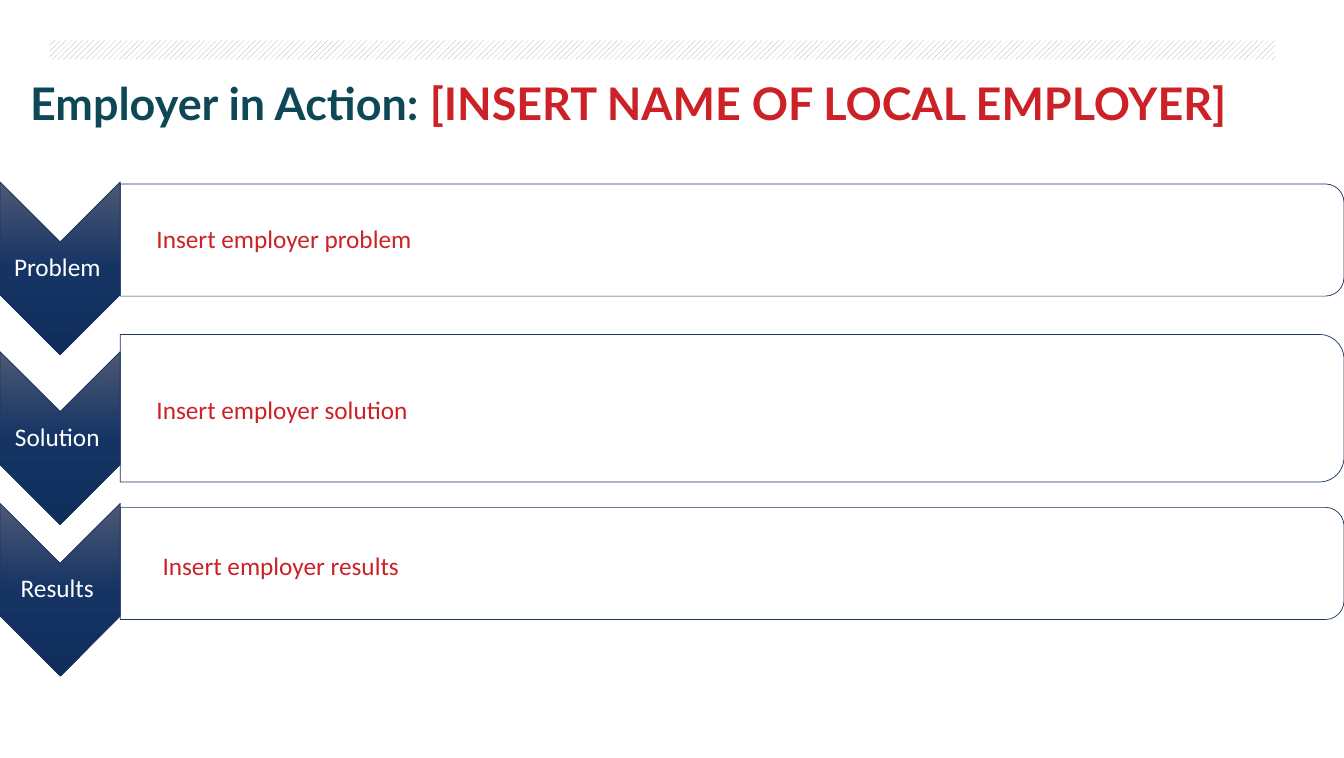
from copy import deepcopy

from pptx import Presentation
from pptx.dml.color import RGBColor
from pptx.enum.dml import MSO_PATTERN
from pptx.enum.shapes import MSO_SHAPE
from pptx.enum.text import MSO_ANCHOR, PP_ALIGN
from pptx.util import Inches, Pt

RECT = MSO_SHAPE.RECTANGLE
CHEVRON = MSO_SHAPE.CHEVRON
ROUND_TOP = MSO_SHAPE.ROUND_2_SAME_RECTANGLE
HATCH = MSO_PATTERN.WIDE_UPWARD_DIAGONAL
MIDDLE, TOP = MSO_ANCHOR.MIDDLE, MSO_ANCHOR.TOP
LEFT, CENTER = PP_ALIGN.LEFT, PP_ALIGN.CENTER

WHITE = RGBColor(0xFF, 0xFF, 0xFF)
GRAY = RGBColor(0x9E, 0xA7, 0xB2)
TEAL = RGBColor(0x0E, 0x47, 0x56)
RED = RGBColor(0xCC, 0x21, 0x26)
NAVY = RGBColor(0x19, 0x35, 0x60)
SHADES = (RGBColor(0x4D, 0x58, 0x75), RGBColor(0x15, 0x34, 0x64),
          RGBColor(0x10, 0x2E, 0x5C))


class ActionSlide:
    heading_font = "Lato"
    body_font = "Calibri"

    def __init__(self, prs):
        self.s = prs.slides.add_slide(prs.slide_layouts[6])

    def shape(self, kind, x, y, w, h):
        sp = self.s.shapes.add_shape(kind, Inches(x), Inches(y), Inches(w), Inches(h))
        sp.shadow.inherit = False
        return sp

    def turned(self, kind, x, y, w, h):
        """Add a shape turned by 90 degrees that covers the given visible box."""
        sp = self.shape(kind, x + (w - h) / 2, y + (h - w) / 2, h, w)
        sp.rotation = 90
        sp.line.color.rgb = NAVY
        sp.line.width = Pt(0.5)
        return sp

    def hatch_band(self, x, y, w, h):
        sp = self.shape(RECT, x, y, w, h)
        sp.fill.patterned()
        sp.fill.pattern = HATCH
        sp.fill.fore_color.rgb = GRAY
        sp.fill.back_color.rgb = WHITE
        sp.line.fill.background()

    def chevron(self, x, y, w, h):
        sp = self.turned(CHEVRON, x, y, w, h)
        sp.fill.gradient()
        sp.fill.gradient_angle = 0
        # A new gradient has two stops; add the third
        first = sp.fill._fill._gradFill.gsLst[0]
        first.addnext(deepcopy(first))
        for i, (stop, shade) in enumerate(zip(sp.fill.gradient_stops, SHADES)):
            stop.position = i / 2
            stop.color.rgb = shade

    def panel(self, x, y, w, h):
        self.turned(ROUND_TOP, x, y, w, h).fill.background()

    def text(self, x, y, w, h, runs, size=18, font=body_font, bold=False,
             align=LEFT, anchor=TOP, inset=None, spacing=None):
        tf = self.s.shapes.add_textbox(Inches(x), Inches(y), Inches(w), Inches(h)).text_frame
        tf.word_wrap = True
        tf.vertical_anchor = anchor
        if inset is not None:
            tf.margin_left = tf.margin_right = Inches(inset)
            tf.margin_top = tf.margin_bottom = Inches(inset)
        p = tf.paragraphs[0]
        p.alignment = align
        p.line_spacing = spacing
        p.font.size, p.font.name, p.font.bold = Pt(size), font, bold
        for words, color in runs:
            r = p.add_run()
            r.text = words
            r.font.color.rgb = color


def main():
    prs = Presentation()
    prs.slide_width, prs.slide_height = Inches(13.3), Inches(7.5)
    slide = ActionSlide(prs)

    # Header
    slide.hatch_band(0.49, 0.4, 12.13, 0.19)
    slide.text(0.2, 0.68, 13.1, 0.67,
               [("Employer in Action: ", TEAL), ("[INSERT NAME OF LOCAL EMPLOYER]", RED)],
               size=32, font=slide.heading_font, bold=True, anchor=MIDDLE)

    # Steps: label, chevron top, panel top and height, prompt, prompt left and top
    steps = [
        ("Problem ", 1.8, 1.82, 1.11, "Insert employer problem", 1.45, 2.16),
        ("Solution ", 3.48, 3.31, 1.46, "Insert employer solution", 1.45, 3.85),
        ("Results ", 4.98, 5.02, 1.11, "Insert employer results", 1.51, 5.4),
    ]
    chevron_w, chevron_h = 1.19, 1.71
    for label, top, panel_top, panel_h, prompt, prompt_x, prompt_y in steps:
        slide.chevron(0, top, chevron_w, chevron_h)
        slide.text(0, top + 0.6, chevron_w, 0.51, [(label, WHITE)],
                   align=CENTER, anchor=MIDDLE, inset=0.01, spacing=0.9)
        slide.panel(chevron_w, panel_top, 12.11, panel_h)
        slide.text(prompt_x, prompt_y, 3.75, 0.4, [(prompt, RED)])

    prs.save("out.pptx")


if __name__ == "__main__":
    main()
